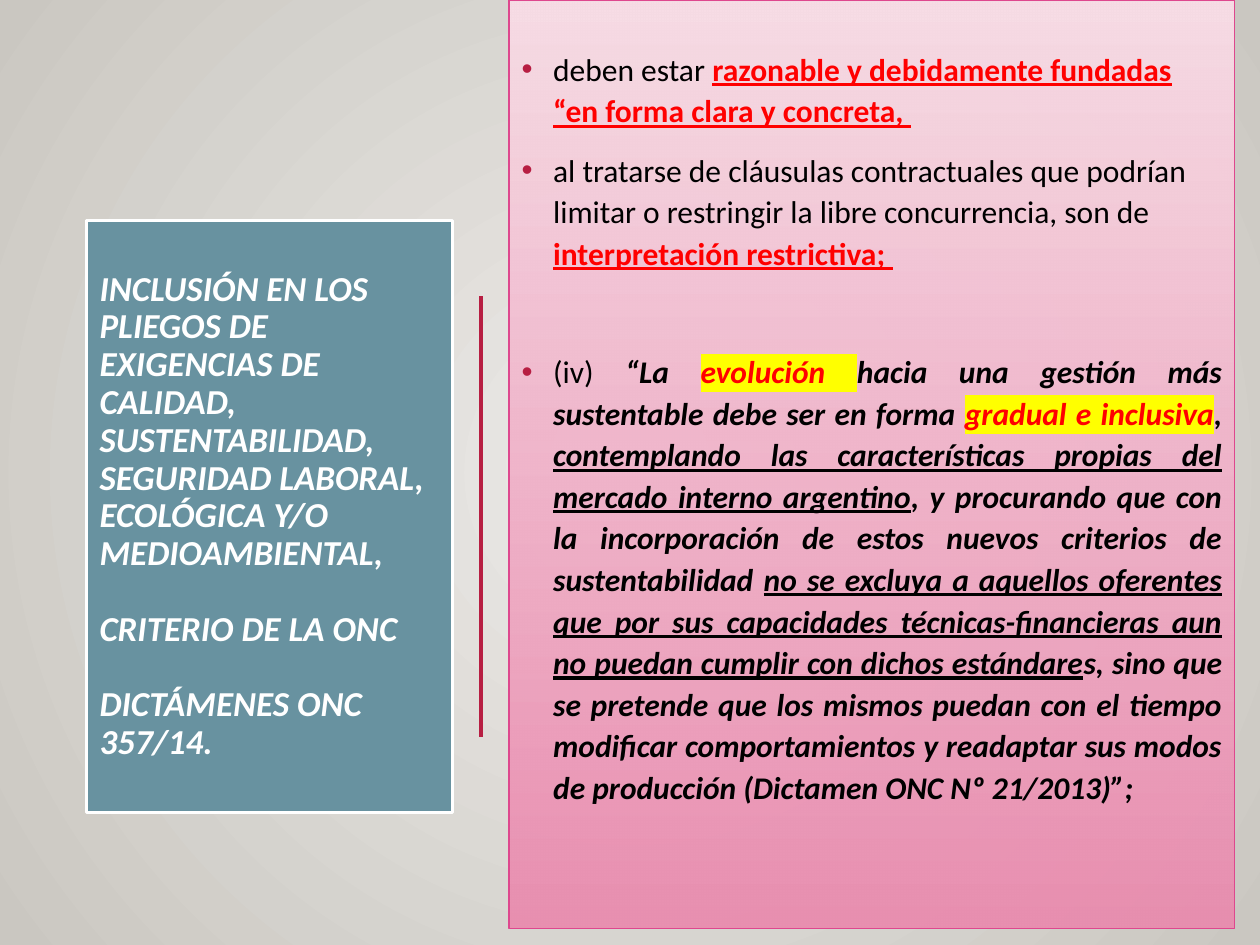
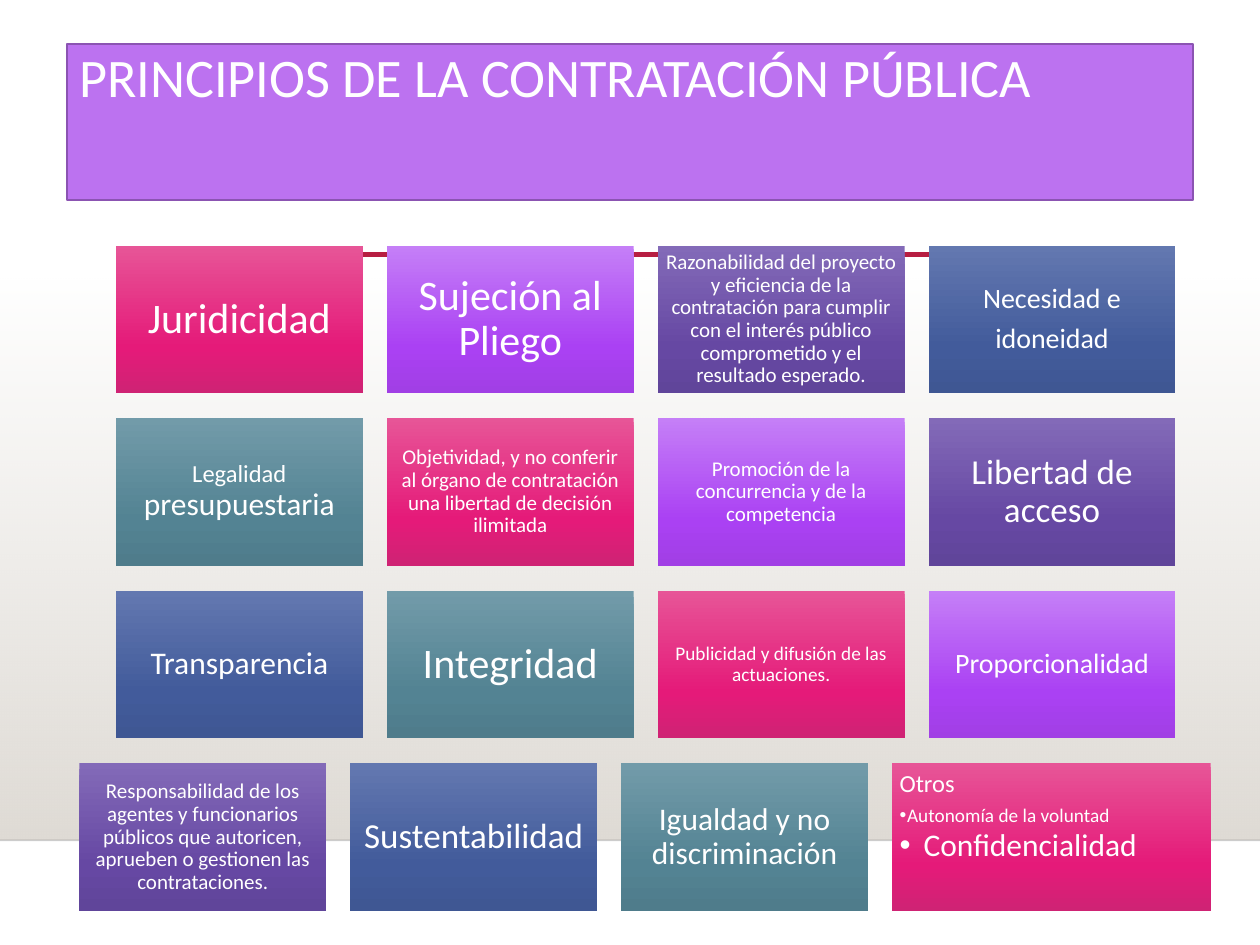
from pptx import Presentation
from pptx.dml.color import RGBColor as RGB
from pptx.enum.shapes import MSO_CONNECTOR as LINK, MSO_SHAPE as SHAPE
from pptx.enum.text import MSO_ANCHOR as ANCHOR, MSO_AUTO_SIZE as FIT, PP_ALIGN as ALIGN
from pptx.oxml import parse_xml
from pptx.oxml.ns import nsdecls, qn
from pptx.util import Inches, Pt
from lxml import etree

FONT = "Calibri"
HEX = {
    "white": "FFFFFF", "black": "000000", "red": "FF0000", "mark": "FFFF00",
    "accent": "B71E42", "slate": "6892A0", "lilac": "BC72F0",
    "plum": "8B54B2", "rose": "DE478E", "floor": "000001",
}
GLOW = [(0, "ECEAE7", 100), (100, "CAC7C1", 100)]
BLUSH = [(0, "F7DCE5", 100), (100, "EA8AAE", 92)]
HAZE = [(0, "DFDBD5", 0), (100, "DFDBD5", 100)]
# Tile gradients, used in turn: pink, violet, purple, blue, teal
TILES = [
    [(pos, tone, 100) for pos, tone in zip((0, 69, 100), tones)]
    for tones in (
        ("E75597", "E51A79", "CF2374"), ("C57FF7", "AA41F3", "A13FE5"),
        ("836AB8", "6648A3", "60459A"), ("6378B0", "425B9B", "3F5793"),
        ("729BA9", "538393", "4F7C8B"),
    )
]

TOPIC = [
    "INCLUSIÓN EN LOS PLIEGOS DE EXIGENCIAS DE CALIDAD, SUSTENTABILIDAD, "
    "SEGURIDAD LABORAL, ECOLÓGICA Y/O MEDIOAMBIENTAL,",
    "CRITERIO DE LA ONC",
    "DICTÁMENES ONC 357/14.",
]
# Each point: space before, alignment, runs of (text, style letters)
# b bold, i italic, u underlined, r red, m marked
POINTS = [
    (0, ALIGN.LEFT, [
        ("deben estar ", ""),
        ("razonable y debidamente fundadas “en forma clara y concreta, ", "bur")]),
    (10, ALIGN.LEFT, [
        ("al tratarse de cláusulas contractuales que podrían limitar o "
         "restringir la libre concurrencia, son de ", ""),
        ("interpretación restrictiva; ", "bur")]),
    (44, ALIGN.JUSTIFY, [
        ("(iv) ", ""), ("“La ", "bi"), ("evolución ", "birm"),
        ("hacia una gestión más sustentable debe ser en forma ", "bi"),
        ("gradual e inclusiva", "birm"), (", ", "bi"),
        ("contemplando las características propias del mercado interno "
         "argentino", "biu"),
        (", y procurando que con la incorporación de estos nuevos criterios "
         "de sustentabilidad ", "bi"),
        ("no se excluya a aquellos oferentes que por sus capacidades "
         "técnicas-financieras aun no puedan cumplir con dichos estándare",
         "biu"),
        ("s, sino que se pretende que los mismos puedan con el tiempo "
         "modificar comportamientos y readaptar sus modos de producción "
         "(Dictamen ONC Nº 21/2013)”;", "bi")]),
]
# Each principle: size and paragraphs
RULES = [
    (24, ["Juridicidad"]),
    (24, ["Sujeción al Pliego"]),
    (12, ["Razonabilidad del proyecto y eficiencia de la contratación para "
          "cumplir con el interés público comprometido y el resultado "
          "esperado."]),
    (16, ["Necesidad e", "idoneidad"]),
    (14, ["Legalidad "]),
    (12, ["Objetividad, y no conferir al órgano de contratación una libertad "
          "de decisión ilimitada"]),
    (12, ["Promoción de la concurrencia y de la competencia"]),
    (20, ["Libertad de acceso"]),
    (18, ["Transparencia"]),
    (24, ["Integridad"]),
    (11, ["Publicidad y difusión de las actuaciones."]),
    (16, ["Proporcionalidad"]),
    (12, ["Responsabilidad de los agentes y funcionarios públicos que "
          "autoricen, aprueben o gestionen las contrataciones."]),
    (20, ["Sustentabilidad"]),
    (18, ["Igualdad y no discriminación"]),
    (14, ["Otros"]),
]
OTHERS = [("Autonomía de la voluntad", 11, 0.06), ("Confidencialidad", 18, 0.19)]


def color(name):
    return RGB.from_string(HEX[name])


def fade(fill, props, stops, radial=False):
    """Give a fill a gradient, downward or from the centre."""
    fill.solid()
    marks = "".join(
        f'<a:gs pos="{pos * 1000}"><a:srgbClr val="{tone}">'
        f'<a:alpha val="{alpha * 1000}"/></a:srgbClr></a:gs>'
        for pos, tone, alpha in stops)
    way = '<a:lin ang="5400000" scaled="0"/>'
    if radial:
        way = ('<a:path path="circle"><a:fillToRect l="50000" t="50000" '
               'r="50000" b="50000"/></a:path>')
    props.replace(props.find(qn("a:solidFill")), parse_xml(
        f'<a:gradFill {nsdecls("a")} rotWithShape="1">'
        f'<a:gsLst>{marks}</a:gsLst>{way}</a:gradFill>'))


def panel(slide, box, stops):
    """Borderless rectangle with a gradient."""
    shape = slide.shapes.add_shape(SHAPE.RECTANGLE, *map(Inches, box))
    shape.shadow.inherit = False
    shape.line.fill.background()
    fade(shape.fill, shape.element.spPr, stops)
    return shape


def rule(slide, ends, name="accent", width=2.5, alpha=100):
    line = slide.shapes.add_connector(LINK.STRAIGHT, *map(Inches, ends))
    line.line.color.rgb = color(name)
    line.line.width = Pt(width)
    props = line.element.spPr
    etree.SubElement(props, qn("a:effectLst"))
    if alpha < 100:
        tone = props.find(".//" + qn("a:srgbClr"))
        etree.SubElement(tone, qn("a:alpha"), val=str(alpha * 1000))


def place(shape, box, edge, width, anchor):
    """Move a placeholder and set its frame."""
    shape.left, shape.top, shape.width, shape.height = map(Inches, box)
    shape.line.color.rgb = color(edge)
    shape.line.width = Pt(width)
    frame = shape.text_frame
    frame.word_wrap = True
    frame.auto_size = FIT.NONE
    frame.vertical_anchor = anchor
    return frame


def write(para, size, name="white", align=ALIGN.LEFT, gap=0.9, before=0, after=0):
    para.alignment = align
    para.line_spacing = gap
    para.space_before = Pt(before)
    para.space_after = Pt(after)
    font = para.font
    font.name, font.size = FONT, Pt(size)
    font.color.rgb = color(name)


def bullet(para, indent, name):
    props = para._p.get_or_add_pPr()
    props.set("marL", str(Inches(indent)))
    props.set("indent", str(-Inches(indent)))
    tint = etree.SubElement(props, qn("a:buClr"))
    etree.SubElement(tint, qn("a:srgbClr"), val=HEX[name])
    etree.SubElement(props, qn("a:buFont"), typeface="Arial")
    etree.SubElement(props, qn("a:buChar"), char="•")


def lines(frame, count):
    """Return the first paragraph and as many new ones as needed."""
    return [frame.paragraphs[0]] + [frame.add_paragraph() for _ in range(count - 1)]


def title(slide, box, texts, fill, edge, width, size, anchor, strong=False):
    shape = slide.shapes.title
    frame = place(shape, box, edge, width, anchor)
    shape.fill.solid()
    shape.fill.fore_color.rgb = color(fill)
    for i, (para, text) in enumerate(zip(lines(frame, len(texts)), texts)):
        para.text = text
        write(para, size, before=21.6 if i else 0)
        para.font.bold = para.font.italic = strong


def points(slide, box):
    """Bulleted criteria with emphasis inside the text."""
    shape = slide.placeholders[1]
    frame = place(shape, box, "rose", 0.75, ANCHOR.MIDDLE)
    fade(shape.fill, shape.element.spPr, BLUSH)
    frame.margin_top, frame.margin_bottom = Inches(0.19), Inches(0.8)
    for para, (before, align, runs) in zip(lines(frame, len(POINTS)), POINTS):
        bullet(para, 0.25, "accent")
        write(para, 18, "black", align, 1.1, before)
        for text, style in runs:
            run = para.add_run()
            run.text = text
            font = run.font
            font.bold, font.italic = "b" in style, "i" in style
            font.underline = "u" in style
            if "r" in style:
                font.color.rgb = color("red")
            if "m" in style:
                mark = parse_xml(f'<a:highlight {nsdecls("a")}>'
                                 f'<a:srgbClr val="{HEX["mark"]}"/></a:highlight>')
                run._r.rPr.find(qn("a:solidFill")).addnext(mark)


def tile(slide, box, stops, size, texts):
    frame = panel(slide, box, stops).text_frame
    frame.word_wrap = True
    frame.vertical_anchor = ANCHOR.MIDDLE
    inset = Inches(round(size / 240, 2))
    frame.margin_left = frame.margin_right = inset
    frame.margin_top = frame.margin_bottom = inset
    for para, text in zip(lines(frame, len(texts)), texts):
        para.add_run().text = text
        write(para, size, align=ALIGN.CENTER, after=size * 0.35)
    return frame


def grid(slide, box):
    """Four by four tiles; the last row starts further left and ends wider."""
    left, top, wide, high = box
    frames = []
    for i, (size, texts) in enumerate(RULES):
        row, col = divmod(i, 4)
        x = left + 2.15 * col - (0.29 if row == 3 else 0)
        w = 2.53 if i == len(RULES) - 1 else wide
        spot = (x, top + 1.37 * row, w, high)
        frames.append(tile(slide, spot, TILES[i % len(TILES)], size, texts))

    # Second word of the budget tile is larger
    run = frames[4].paragraphs[0].add_run()
    run.text = "presupuestaria"
    run.font.size = Pt(18)

    # Last tile holds a short list
    other = frames[-1]
    other.vertical_anchor = ANCHOR.TOP
    other.paragraphs[0].alignment = ALIGN.LEFT
    for text, size, indent in OTHERS:
        para = other.add_paragraph()
        para.level = 1
        para.text = text
        bullet(para, indent, "white")
        write(para, size, after=size * 0.15)


def criteria(deck):
    slide = deck.slides.add_slide(deck.slide_layouts[1])
    back = slide.background.fill
    back.solid()
    fade(back, slide.element.find(".//" + qn("p:bgPr")), GLOW, radial=True)
    title(slide, (0.69, 1.75, 2.9, 4.7), TOPIC, "slate", "white", 1.75, 20,
          ANCHOR.MIDDLE, strong=True)
    rule(slide, (3.82, 2.35, 3.82, 5.85))
    points(slide, (4.04, 0, 5.76, 7.37))


def principles(deck):
    slide = deck.slides.add_slide(deck.slide_layouts[5])
    # Backdrop: haze, floor line and accent line
    panel(slide, (0, 2.2, 10, 4.46), HAZE)
    rule(slide, (0, 6.67, 10, 6.67), "floor", 1, 20)
    rule(slide, (1.58, 2.02, 8.77, 2.02))
    title(slide, (0.53, 0.35, 8.94, 1.24), ["PRINCIPIOS DE LA CONTRATACIÓN PÚBLICA"],
          "lilac", "plum", 1.25, 31, ANCHOR.TOP)
    grid(slide, (0.92, 1.95, 1.96, 1.17))


def main():
    deck = Presentation()
    deck.slide_width, deck.slide_height = Inches(10), Inches(7.5)
    criteria(deck)
    principles(deck)
    deck.save("out.pptx")


if __name__ == "__main__":
    main()
